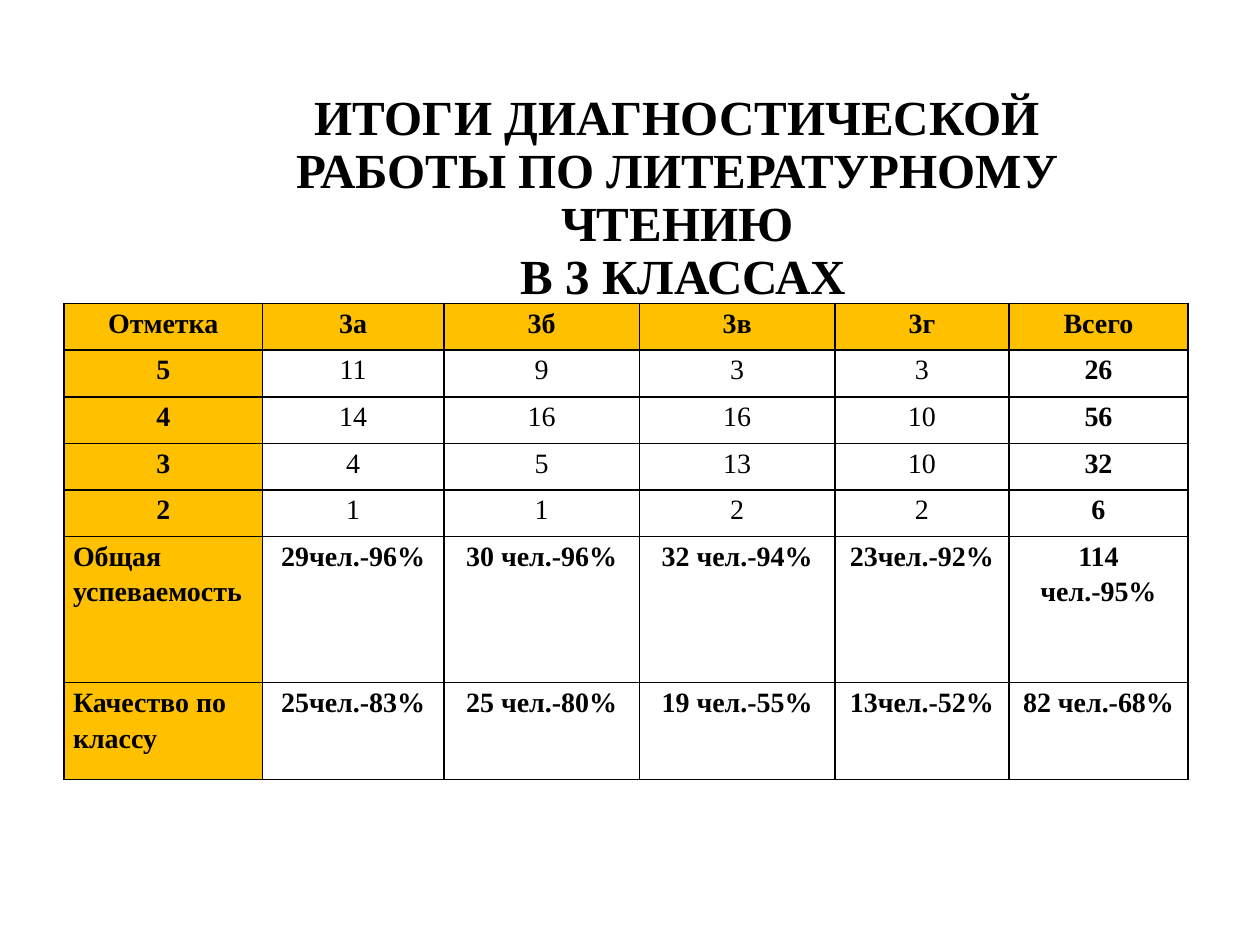
import lxml.etree
import pptx
import pptx.dml.color
import pptx.enum.text
import pptx.oxml.ns
import pptx.util

ALIGN = pptx.enum.text.PP_ALIGN
TITLE = "ИТОГИ ДИАГНОСТИЧЕСКОЙ РАБОТЫ ПО ЛИТЕРАТУРНОМУ ЧТЕНИЮ\v В 3 КЛАССАХ"
RESULTS = [
    ["Отметка", "3а", "3б", "3в", "3г", "Всего"],
    ["5", "11", "9", "3", "3", "26"],
    ["4", "14", "16", "16", "10", "56"],
    ["3", "4", "5", "13", "10", "32"],
    ["2", "1", "1", "2", "2", "6"],
    ["Общая успеваемость", "29чел.-96%", "30 чел.-96%", "32 чел.-94%",
     "23чел.-92%", "114 чел.-95%"],
    ["Качество по классу", "25чел.-83%", "25 чел.-80%", "19 чел.-55%",
     "13чел.-52%", "82 чел.-68%"],
]
COLUMN_WIDTHS = [1.57, 1.44, 1.55, 1.55, 1.38, 1.42]
ROW_HEIGHTS = [0.37] * 5 + [1.16, 0.77]


def colour(value):
    """Return the colour for a hex string."""
    return pptx.dml.color.RGBColor.from_string(value)


def inches(*values):
    """Convert several lengths in inches."""
    return [pptx.util.Inches(value) for value in values]


def format_paragraph(para, size, spacing, bold=True, align=ALIGN.CENTER):
    """Set the typeface and layout of one paragraph."""
    para.alignment = align
    para.line_spacing = spacing
    para.font.name = "Times New Roman"
    para.font.size = pptx.util.Pt(size)
    para.font.bold = bold
    para.font.color.rgb = colour("000000")


def add_borders(cell):
    """Draw a thin black line on each side of a cell."""
    properties = cell._tc.get_or_add_tcPr()
    for index, side in enumerate(("lnL", "lnR", "lnT", "lnB")):
        line = lxml.etree.Element(pptx.oxml.ns.qn("a:" + side), w=str(pptx.util.Pt(1)))
        fill = lxml.etree.SubElement(line, pptx.oxml.ns.qn("a:solidFill"))
        lxml.etree.SubElement(fill, pptx.oxml.ns.qn("a:srgbClr"), val="000000")
        properties.insert(index, line)


def place_title(page, box):
    """Fill the title placeholder, centred on the given box."""
    title = page.shapes.title
    title.left, title.top, title.width, title.height = inches(*box)
    frame = title.text_frame
    frame.word_wrap = True
    frame.auto_size = pptx.enum.text.MSO_AUTO_SIZE.NONE
    frame.vertical_anchor = pptx.enum.text.MSO_ANCHOR.MIDDLE
    frame.text = TITLE
    format_paragraph(frame.paragraphs[0], 28, 0.9)


def fill_cell(cell, text, row, column):
    """Write one result and style it by its place in the table."""
    is_heading = row == 0 or column == 0
    is_count = 1 <= row <= 4 and 1 <= column <= 4
    is_summary_label = row > 4 and column == 0
    cell.margin_left, cell.margin_right = inches(0.07, 0.07)
    cell.margin_top = cell.margin_bottom = 0
    cell.fill.solid()
    cell.fill.fore_color.rgb = colour("FFC000" if is_heading else "FFFFFF")
    cell.text = text
    format_paragraph(cell.text_frame.paragraphs[0], 16, 1.15, not is_count,
                     ALIGN.LEFT if is_summary_label else ALIGN.CENTER)
    add_borders(cell)


def place_results(page, box):
    """Add the results table, sharing the box among its columns and rows."""
    left, top, width, height = inches(*box)
    table = page.shapes.add_table(
        len(RESULTS), len(RESULTS[0]), left, top, width, height).table
    for column, share in zip(table.columns, COLUMN_WIDTHS):
        column.width = int(width * share / sum(COLUMN_WIDTHS))
    for row, share in zip(table.rows, ROW_HEIGHTS):
        row.height = int(height * share / sum(ROW_HEIGHTS))
    for row, texts in enumerate(RESULTS):
        for column, text in enumerate(texts):
            fill_cell(table.cell(row, column), text, row, column)


def main():
    """Build and save the slide."""
    deck = pptx.Presentation()
    deck.slide_width, deck.slide_height = inches(10, 7.5)
    page = deck.slides.add_slide(deck.slide_layouts[5])
    place_title(page, (1.77, 1.55, 7.21, 0.06))
    place_results(page, (0.51, 2.41, 8.92, 3.78))
    deck.save("out.pptx")


if __name__ == "__main__":
    main()
